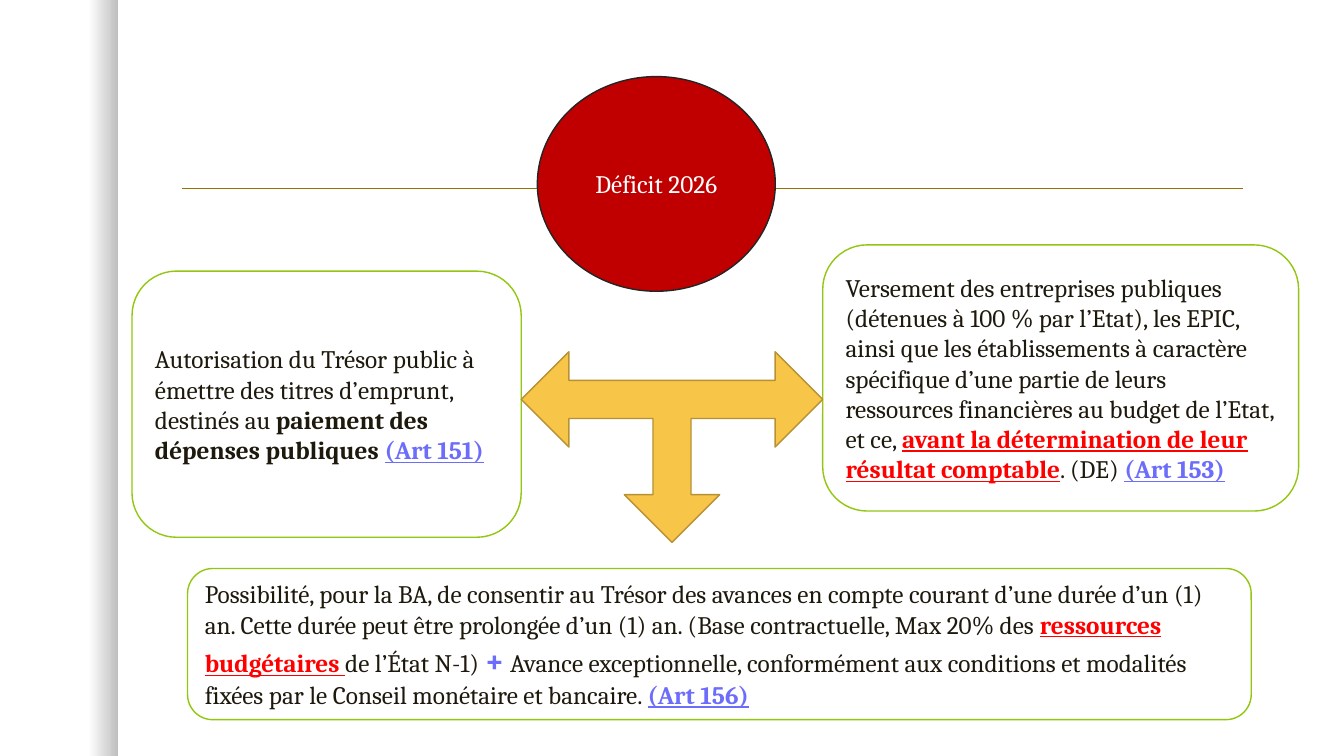
from dataclasses import dataclass

from pptx import Presentation
from pptx.dml.color import RGBColor
from pptx.enum.shapes import MSO_CONNECTOR, MSO_SHAPE
from pptx.enum.text import MSO_ANCHOR, PP_ALIGN
from pptx.oxml.ns import qn
from pptx.shapes.autoshape import Shape
from pptx.slide import Slide
from pptx.text.text import _Paragraph as Paragraph
from pptx.util import Emu, Pt

PX = 9144  # EMU per px, 100 px to the inch
FONT = "Cambria"
BLANK_LAYOUT = 6

WHITE = RGBColor(0xFF, 0xFF, 0xFF)
SHADE = RGBColor(0xBF, 0xBF, 0xBF)
RULE = RGBColor(0x98, 0x6F, 0x07)
CRIMSON = RGBColor(0xC0, 0x00, 0x00)
CHARCOAL = RGBColor(0x24, 0x24, 0x24)
GREEN = RGBColor(0x92, 0xC6, 0x10)
GOLD = RGBColor(0xF7, 0xC5, 0x47)
BRONZE = RGBColor(0xB7, 0x92, 0x35)
INK = RGBColor(0x1E, 0x19, 0x0D)
RED = RGBColor(0xFF, 0x00, 0x00)
VIOLET = RGBColor(0x6D, 0x6D, 0xFB)


@dataclass(frozen=True)
class Box:
    left: int
    top: int
    width: int
    height: int


@dataclass(frozen=True)
class Span:
    text: str
    color: RGBColor = INK
    bold: bool = False
    underline: bool = False
    size: int = 18


@dataclass(frozen=True)
class Measure:
    """One way of financing the deficit."""
    box: Box
    spans: tuple[Span, ...]


def key_point(text: str) -> Span:
    return Span(text, RED, bold=True, underline=True)


def article(number: int) -> Span:
    return Span(f"(Art {number})", VIOLET, bold=True, underline=True)


MEASURES = (
    Measure(Box(131, 269, 386, 264), (
        Span("Autorisation du Trésor public à émettre des titres d’emprunt, destinés au "),
        Span("paiement des dépenses publiques ", bold=True),
        article(151),
    )),
    Measure(Box(816, 243, 472, 264), (
        Span("Versement des entreprises publiques (détenues à 100 % par l’Etat), les EPIC, "
             "ainsi que les établissements à caractère spécifique d’une partie de leurs "
             "ressources financières au budget de l’Etat, et ce, "),
        key_point("avant la détermination de leur résultat comptable"),
        Span(". (DE) "),
        article(153),
    )),
    Measure(Box(186, 564, 1055, 150), (
        Span("Possibilité, pour la BA, de consentir au Trésor des avances en compte courant "
             "d’une durée d’un (1) an. Cette durée peut être prolongée d’un (1) an. "
             "(Base contractuelle, Max 20% des "),
        key_point("ressources budgétaires "),
        Span("de l’État N-1) "),
        Span("+", VIOLET, bold=True, size=24),
        Span(" Avance exceptionnelle, conformément aux conditions et modalités fixées "
             "par le Conseil monétaire et bancaire. "),
        article(156),
    )),
)


def px(n: int) -> Emu:
    return Emu(n * PX)


def add_text(p: Paragraph, text: str, *, color: RGBColor, size: int = 18,
             bold: bool = False, underline: bool = False) -> None:
    r = p.add_run()
    r.text = text
    r.font.name = FONT
    r.font.size = Pt(size)
    r.font.bold = bold
    r.font.underline = underline
    r.font.color.rgb = color


def add_shape(s: Slide, kind: MSO_SHAPE, box: Box, *, fill: RGBColor | None = None,
              line: RGBColor | None = None) -> Shape:
    sp = s.shapes.add_shape(kind, px(box.left), px(box.top), px(box.width), px(box.height))
    sp.shadow.inherit = False
    if fill is None:
        sp.fill.background()
    else:
        sp.fill.solid()
        sp.fill.fore_color.rgb = fill
    if line is None:
        sp.line.fill.background()
    else:
        sp.line.color.rgb = line
        sp.line.width = Pt(1)
    return sp


def write_spans(sp: Shape, spans: tuple[Span, ...], align: PP_ALIGN) -> None:
    tf = sp.text_frame
    tf.word_wrap = True
    tf.vertical_anchor = MSO_ANCHOR.MIDDLE
    p = tf.paragraphs[0]
    p.alignment = align
    for span in spans:
        add_text(p, span.text, color=span.color, size=span.size,
                 bold=span.bold, underline=span.underline)


def add_margin(s: Slide) -> None:
    """Left margin that darkens over its last quarter."""
    sp = add_shape(s, MSO_SHAPE.RECTANGLE, Box(0, 0, 117, 750))
    sp.fill.gradient()
    sp.fill.gradient_angle = 0
    for stop, position, color in zip(sp.fill.gradient_stops, (0.75, 1), (WHITE, SHADE)):
        stop.position = position
        stop.color.rgb = color


def add_rule(s: Slide) -> None:
    rule = s.shapes.add_connector(MSO_CONNECTOR.STRAIGHT, px(181), px(187), px(1233), px(187))
    rule.line.color.rgb = RULE
    rule.line.width = Pt(1)
    sp_pr = rule._element.spPr
    sp_pr.append(sp_pr.makeelement(qn("a:effectLst"), {}))


def add_arrow(s: Slide) -> None:
    """Three-way arrow turned to point left, right and down."""
    arrow = add_shape(s, MSO_SHAPE.LEFT_RIGHT_UP_ARROW, Box(517, 349, 299, 189),
                      fill=GOLD, line=BRONZE)
    arrow.rotation = 180
    arrow.adjustments[0] = 0.2


def main() -> None:
    prs = Presentation()
    prs.slide_width, prs.slide_height = px(1333), px(750)
    s = prs.slides.add_slide(prs.slide_layouts[BLANK_LAYOUT])

    add_margin(s)
    add_rule(s)
    deficit = add_shape(s, MSO_SHAPE.OVAL, Box(533, 76, 236, 213), fill=CRIMSON, line=CHARCOAL)
    write_spans(deficit, (Span("Déficit 2026", WHITE),), PP_ALIGN.CENTER)
    for measure in MEASURES:
        sp = add_shape(s, MSO_SHAPE.ROUNDED_RECTANGLE, measure.box, line=GREEN)
        write_spans(sp, measure.spans, PP_ALIGN.LEFT)
    add_arrow(s)

    prs.save("out.pptx")


if __name__ == "__main__":
    main()
